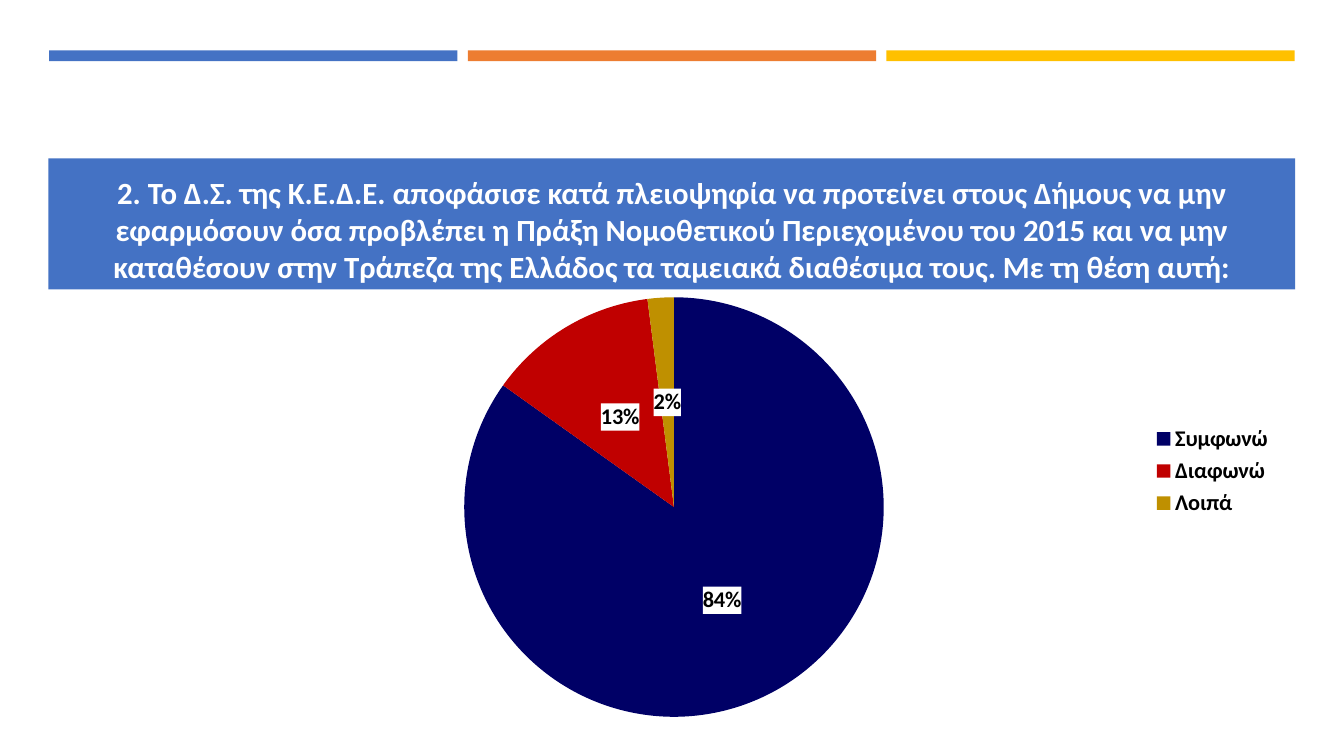
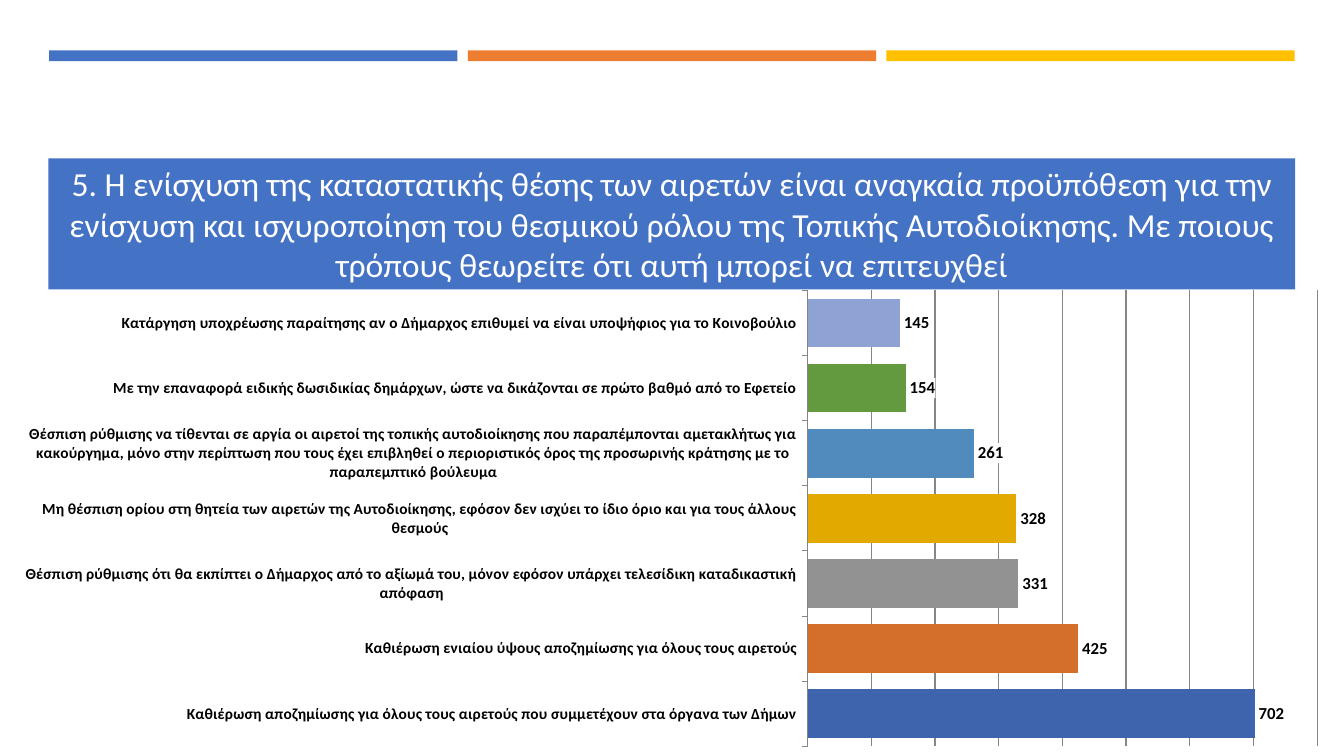
from lxml.etree import SubElement
from pptx import Presentation
from pptx.chart.data import CategoryChartData
from pptx.dml.color import RGBColor
from pptx.enum.chart import (XL_CHART_TYPE as ChartType, XL_LABEL_POSITION as LabelPosition,
                             XL_LEGEND_POSITION as LegendPosition, XL_TICK_MARK as TickMark)
from pptx.enum.shapes import MSO_SHAPE as Shape
from pptx.enum.text import MSO_ANCHOR as Anchor, MSO_AUTO_SIZE as AutoSize, PP_ALIGN as Align
from pptx.oxml import parse_xml
from pptx.oxml.ns import nsdecls, qn
from pptx.util import Cm, Pt

FONT = "Calibri"
BLUE, ORANGE, YELLOW = "4472C4", "ED7D31", "FFC000"
BLACK, WHITE, GRAY = "000000", "FFFFFF", "868686"
SLIDE_WIDTH, SLIDE_HEIGHT = 33.87, 19.05
STRIP_LEFT, STRIP_TOP, STRIP_WIDTH, STRIP_HEIGHT, STRIP_PITCH = 1.24, 1.27, 10.29, 0.27, 10.55

POSITION_TITLE = (
    "2. Το Δ.Σ. της Κ.Ε.Δ.Ε. αποφάσισε κατά πλειοψηφία να προτείνει στους Δήμους να μην "
    "εφαρμόσουν όσα προβλέπει η Πράξη Νομοθετικού Περιεχομένου του 2015 και να μην "
    "καταθέσουν στην Τράπεζα της Ελλάδος τα ταμειακά διαθέσιμα τους. Με τη θέση αυτή:")
POSITION_ANSWERS = [
    ("Συμφωνώ", 84, "000066"),
    ("Διαφωνώ", 13, "C00000"),
    ("Λοιπά", 2, "BF9000"),
]
STATUS_TITLE = (
    "5. Η ενίσχυση της καταστατικής θέσης των αιρετών είναι αναγκαία προϋπόθεση για την "
    "ενίσχυση και ισχυροποίηση του θεσμικού ρόλου της Τοπικής Αυτοδιοίκησης. Με ποιους "
    "τρόπους θεωρείτε ότι αυτή μπορεί να επιτευχθεί")
STATUS_ANSWERS = [
    ("Καθιέρωση αποζημίωσης για όλους τους αιρετούς που συμμετέχουν στα όργανα των Δήμων",
     702, "3D64AC"),
    ("Καθιέρωση ενιαίου ύψους αποζημίωσης για όλους τους αιρετούς", 425, "D36F2B"),
    ("Θέσπιση ρύθμισης ότι θα εκπίπτει ο Δήμαρχος από το αξίωμά του, μόνον εφόσον υπάρχει "
     "τελεσίδικη καταδικαστική απόφαση", 331, "929292"),
    ("Μη θέσπιση ορίου στη θητεία των αιρετών της Αυτοδιοίκησης, εφόσον δεν ισχύει το ίδιο "
     "όριο και για τους άλλους θεσμούς", 328, "E2AA00"),
    ("Θέσπιση ρύθμισης να τίθενται σε αργία οι αιρετοί της τοπικής αυτοδιοίκησης που "
     "παραπέμπονται αμετακλήτως για κακούργημα, μόνο στην περίπτωση που τους έχει επιβληθεί "
     "ο περιοριστικός όρος της προσωρινής κράτησης με το παραπεμπτικό βούλευμα",
     261, "518BBD"),
    ("Με την επαναφορά ειδικής δωσιδικίας δημάρχων, ώστε να δικάζονται σε πρώτο βαθμό από το "
     "Εφετείο", 154, "639A3F"),
    ("Κατάργηση υποχρέωσης παραίτησης αν ο Δήμαρχος επιθυμεί να είναι υποψήφιος για το "
     "Κοινοβούλιο", 145, "8FA2D4"),
]


def paint(fill, color):
    """Apply a solid hex colour to a fill."""
    fill.solid()
    fill.fore_color.rgb = RGBColor.from_string(color)


def style_font(font, size, bold=False, color=BLACK):
    """Set the shared typeface with a size, weight and colour."""
    font.name, font.size, font.bold = FONT, Pt(size), bold
    paint(font.fill, color)


def write_text(frame, text, align=Align.CENTER, anchor=Anchor.BOTTOM, **font_format):
    """Write one formatted paragraph into a text frame."""
    frame.word_wrap = True
    frame.auto_size = AutoSize.NONE
    frame.vertical_anchor = anchor
    paragraph = frame.paragraphs[0]
    paragraph.alignment = align
    run = paragraph.add_run()
    run.text = text
    style_font(run.font, **font_format)


def add_strips(slide):
    """Draw the three coloured strips along the top."""
    for index, color in enumerate((BLUE, ORANGE, YELLOW)):
        strip = slide.shapes.add_shape(
            Shape.RECTANGLE, Cm(STRIP_LEFT + index * STRIP_PITCH), Cm(STRIP_TOP),
            Cm(STRIP_WIDTH), Cm(STRIP_HEIGHT))
        strip.shadow.inherit = False
        strip.line.fill.background()
        paint(strip.fill, color)


def add_question_slide(deck, question, **font_format):
    """Add a slide with the strips and a question on the blue band."""
    slide = deck.slides.add_slide(deck.slide_layouts[5])
    add_strips(slide)
    title = slide.shapes.title
    title.left, title.top, title.width, title.height = Cm(1.22), Cm(3.99), Cm(31.42), Cm(3.3)
    paint(title.fill, BLUE)
    write_text(title.text_frame, question, color=WHITE, **font_format)
    return slide


def set_layout(parent, index, inner=False, **bounds):
    """Fix a chart part at fractions of the chart area."""
    for previous in parent.findall(qn("c:layout")):
        parent.remove(previous)
    layout = parse_xml(f"<c:layout {nsdecls('c')}><c:manualLayout/></c:layout>")
    settings = {"layoutTarget": "inner"} if inner else {}
    settings.update(xMode="edge", yMode="edge", **bounds)
    for name, value in settings.items():
        SubElement(layout[0], qn(f"c:{name}")).set("val", str(value))
    parent.insert(index, layout)


def add_answer_chart(slide, kind, answers, top, plot_bounds):
    """Add a full-width chart with one colour for each answer."""
    names, counts, colors = zip(*answers)
    data = CategoryChartData()
    data.categories = names
    data.add_series("Series 1", counts)
    chart = slide.shapes.add_chart(
        kind, 0, Cm(top), Cm(SLIDE_WIDTH), Cm(SLIDE_HEIGHT - top), data).chart
    chart.has_title = False
    chart.has_legend = False
    style_font(chart.font, 10)
    for index, color in enumerate(colors):
        paint(chart.plots[0].series[0].points[index].format.fill, color)
    set_layout(chart._chartSpace.chart.plotArea, 0, inner=True, **plot_bounds)
    return chart


def add_labels(plot, size, position, number_format):
    """Show values in bold on white boxes."""
    plot.has_data_labels = True
    labels = plot.data_labels
    labels.show_value = True
    labels.position = position
    labels.number_format = number_format
    labels.number_format_is_linked = False
    style_font(labels.font, size, bold=True)
    box = parse_xml(
        f"<c:spPr {nsdecls('c', 'a')}><a:solidFill><a:srgbClr val='{WHITE}'/></a:solidFill></c:spPr>")
    labels._element.find(qn("c:txPr")).addprevious(box)


def add_legend(chart, **bounds):
    """Place a bold legend at the right of the chart."""
    chart.has_legend = True
    legend = chart.legend
    legend.position = LegendPosition.RIGHT
    legend.include_in_layout = False
    style_font(legend.font, 16, bold=True)
    set_layout(legend._element, 1, **bounds)


def format_axes(chart):
    """Style the answer axis and show gridlines of the hidden value axis."""
    answers, counts = chart.category_axis, chart.value_axis
    answers.major_tick_mark = TickMark.OUTSIDE
    style_font(answers.tick_labels.font, 11, bold=True)
    counts.minimum_scale, counts.maximum_scale, counts.major_unit = 0, 800, 100
    counts.has_major_gridlines = True
    counts.visible = False
    for line in (answers.format.line, counts.major_gridlines.format.line):
        line.width = Pt(0.75)
        paint(line.fill, GRAY)


def add_position_slide(deck):
    """Build the slide on agreement with the decision."""
    slide = add_question_slide(deck, POSITION_TITLE, size=22, bold=True)
    chart = add_answer_chart(slide, ChartType.PIE, POSITION_ANSWERS, 7.47,
                             {"x": 0.066, "y": 0.002, "w": 0.871, "h": 0.913})
    add_labels(chart.plots[0], 16, LabelPosition.CENTER, '0"%"')
    add_legend(chart, x=0.857, y=0.27, w=0.09, h=0.22)


def add_status_slide(deck):
    """Build the slide on strengthening elected officials."""
    slide = add_question_slide(deck, STATUS_TITLE, size=24)
    chart = add_answer_chart(slide, ChartType.BAR_CLUSTERED, STATUS_ANSWERS, 7.09,
                             {"x": 0.601, "y": 0.019, "w": 0.379, "h": 0.961})
    chart.plots[0].gap_width = 34
    add_labels(chart.plots[0], 12, LabelPosition.OUTSIDE_END, "General")
    format_axes(chart)


def main():
    """Build and save the presentation."""
    deck = Presentation()
    deck.slide_width, deck.slide_height = Cm(SLIDE_WIDTH), Cm(SLIDE_HEIGHT)
    add_position_slide(deck)
    add_status_slide(deck)
    deck.save("out.pptx")


if __name__ == "__main__":
    main()
